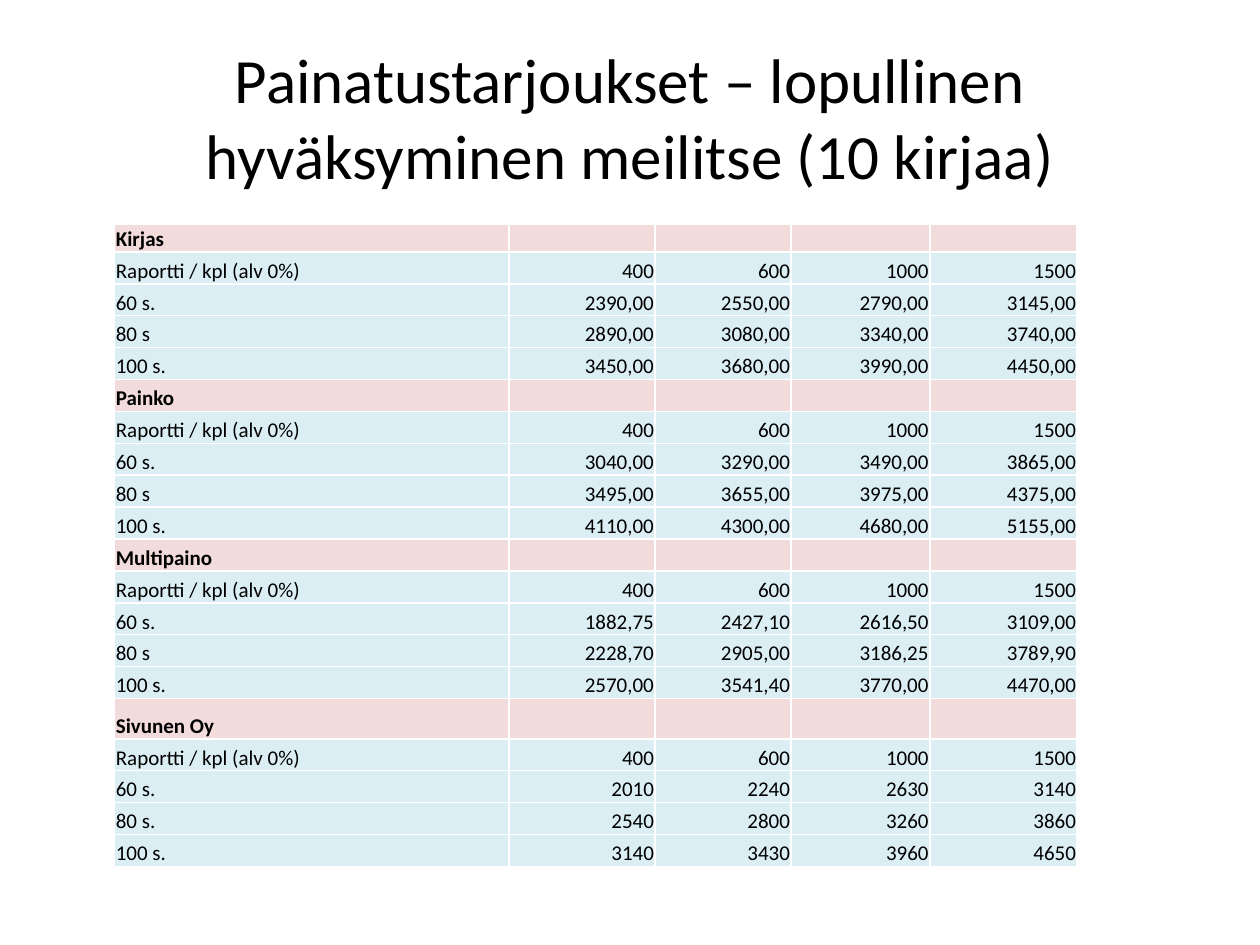
from lxml import etree
from pptx import Presentation
from pptx.dml.color import RGBColor as RGB
from pptx.enum.text import MSO_ANCHOR as Anchor, PP_ALIGN as Align
from pptx.oxml.ns import qn
from pptx.util import Inches, Pt

# Content: each printer's prices by page count and print run
TITLE = "Painatustarjoukset – lopullinen hyväksyminen meilitse (10 kirjaa)"
HEAD = ("Raportti / kpl (alv 0%)", "400", "600", "1000", "1500")
OFFERS = [
    ("Kirjas", [
        ("60 s.", "2390,00", "2550,00", "2790,00", "3145,00"),
        ("80 s", "2890,00", "3080,00", "3340,00", "3740,00"),
        ("100 s.", "3450,00", "3680,00", "3990,00", "4450,00")]),
    ("Painko", [
        ("60 s.", "3040,00", "3290,00", "3490,00", "3865,00"),
        ("80 s", "3495,00", "3655,00", "3975,00", "4375,00"),
        ("100 s.", "4110,00", "4300,00", "4680,00", "5155,00")]),
    ("Multipaino", [
        ("60 s.", "1882,75", "2427,10", "2616,50", "3109,00"),
        ("80 s", "2228,70", "2905,00", "3186,25", "3789,90"),
        ("100 s.", "2570,00", "3541,40", "3770,00", "4470,00")]),
    ("Sivunen Oy", [
        ("60 s.", "2010", "2240", "2630", "3140"),
        ("80 s.", "2540", "2800", "3260", "3860"),
        ("100 s.", "3140", "3430", "3960", "4650")]),
]
COLORS = {"text": "000000", "name": "F2DCDB", "price": "DBEEF4", "line": "FFFFFF"}
FONT = "Calibri"
COLS = (3.13, 1.16, 1.08, 1.1, 1.17)
HEIGHT = 5.1
ODD = {0: 0.22, 15: 0.32}  # rows that differ from the even height
CELL = {"margin_left": Inches(0.01), "margin_right": Inches(0.01),
        "margin_top": Inches(0.01), "margin_bottom": 0,
        "vertical_anchor": Anchor.BOTTOM}
PLAIN = ("first_row", "horz_banding")


def style(para, size, align, bold=False):
    para.alignment = align
    for run in para.runs:
        for key, val in {"name": FONT, "size": Pt(size), "bold": bold}.items():
            setattr(run.font, key, val)
        run.font.color.rgb = RGB.from_string(COLORS["text"])


def border(cell):
    props = cell._tc.get_or_add_tcPr()
    for side in ("lnL", "lnR", "lnT", "lnB"):
        line = etree.SubElement(props, qn(f"a:{side}"), w=str(Pt(1)))
        fill = etree.SubElement(line, qn("a:solidFill"))
        etree.SubElement(fill, qn("a:srgbClr"), val=COLORS["line"])


def draw(cell, text, col, named):
    for key, val in CELL.items():
        setattr(cell, key, val)
    border(cell)
    cell.fill.solid()
    cell.fill.fore_color.rgb = RGB.from_string(COLORS["name" if named else "price"])
    para = cell.text_frame.paragraphs[0]
    if text:
        para.text = text
        style(para, 12, Align.RIGHT if col else Align.LEFT, named)
    else:  # keeps an empty cell from stretching its row
        etree.SubElement(para._p, qn("a:endParaRPr"), sz="1200")


def main():
    deck = Presentation()
    deck.slide_width, deck.slide_height = Inches(10), Inches(7.5)
    slide = deck.slides.add_slide(deck.slide_layouts[5])

    # Title
    title = slide.shapes.title
    spots = {"left": 0.5, "top": 0.3, "width": 9, "height": 1.25}
    for key, val in spots.items():
        setattr(title, key, Inches(val))
    title.text = TITLE
    title.text_frame.vertical_anchor = Anchor.MIDDLE
    style(title.text_frame.paragraphs[0], 36, Align.CENTER)

    # Table: a name row, a head row and price rows for each printer
    rows = []
    for name, prices in OFFERS:
        rows += [(name, "", "", "", ""), HEAD, *prices]
    table = slide.shapes.add_table(
        len(rows), len(COLS), Inches(0.91), Inches(1.78),
        Inches(sum(COLS)), Inches(HEIGHT)).table
    for flag in PLAIN:
        setattr(table, flag, False)
    for col, width in enumerate(COLS):
        table.columns[col].width = Inches(width)
    even = (HEIGHT - sum(ODD.values())) / (len(rows) - len(ODD))
    for row, texts in enumerate(rows):
        table.rows[row].height = Inches(ODD.get(row, even))
        for col, text in enumerate(texts):
            draw(table.cell(row, col), text, col, not texts[1])

    deck.save("out.pptx")


if __name__ == "__main__":
    main()
